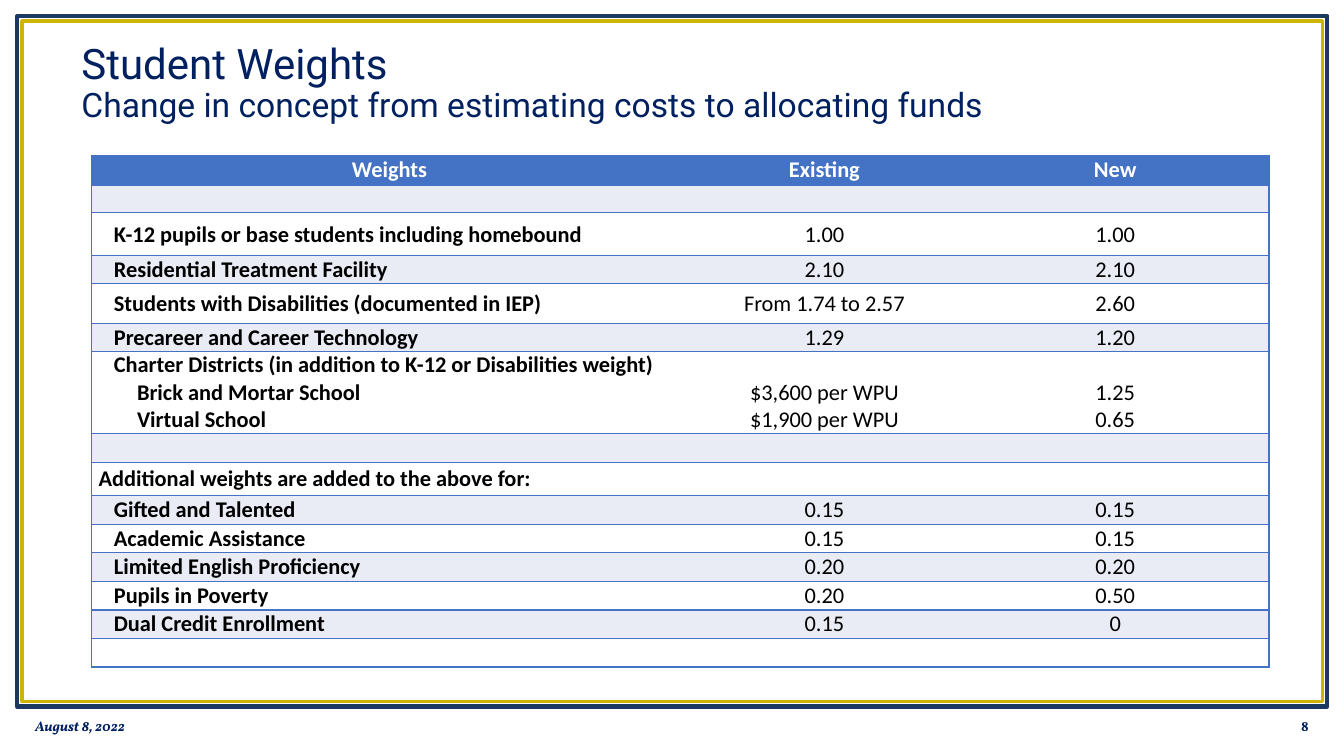
import pptx
import pptx.dml.color
import pptx.enum.shapes
import pptx.enum.text
import pptx.oxml
import pptx.oxml.ns
import pptx.util

Pt = pptx.util.Pt
ALIGN = pptx.enum.text.PP_ALIGN
ANCHOR = pptx.enum.text.MSO_ANCHOR

NAVY, BLUE, BAND, WHITE, BLACK = "002060", "4472C4", "E9EBF5", "FFFFFF", "000000"
INDENT, SUB_INDENT = 10.85, 27.4
BODY_SIZE = 16

# Each row: height, label lines as (text, indent), existing values, new values
ROWS = [
    (21.4, [("Weights", 0)], ["Existing"], ["New"]),
    (19.5, [], [], []),
    (30.7, [("K-12 pupils or base students including homebound", INDENT)], ["1.00"], ["1.00"]),
    (19.6, [("Residential Treatment Facility", INDENT)], ["2.10"], ["2.10"]),
    (28.9, [("Students with Disabilities (documented in IEP)", INDENT)],
     ["From 1.74 to 2.57"], ["2.60"]),
    (20, [("Precareer and Career Technology", INDENT)], ["1.29"], ["1.20"]),
    (58.6, [("Charter Districts (in addition to K-12 or Disabilities weight)", INDENT),
            ("Brick and Mortar School", SUB_INDENT),
            ("Virtual School", SUB_INDENT)],
     ["$3,600 per WPU", "$1,900 per WPU"], ["1.25", "0.65"]),
    (20.4, [], [], []),
    (24, [("Additional weights are added to the above for:", 0)], [], []),
    (20.4, [("Gifted and Talented", INDENT)], ["0.15"], ["0.15"]),
    (20.4, [("Academic Assistance", INDENT)], ["0.15"], ["0.15"]),
    (20.4, [("Limited English Proficiency", INDENT)], ["0.20"], ["0.20"]),
    (20.4, [("Pupils in Poverty", INDENT)], ["0.20"], ["0.50"]),
    (20.4, [("Dual Credit Enrollment", INDENT)], ["0.15"], ["0"]),
    (20.4, [], [], []),
]
COLUMN_WIDTHS = [425.5, 195.8, 219.6]


def rgb(color):
    return pptx.dml.color.RGBColor.from_string(color)


def add_run(p, text, size, font, color, bold=False, italic=False):
    r = p.add_run()
    r.text = text
    r.font.size = Pt(size)
    r.font.name = font
    r.font.color.rgb = rgb(color)
    r.font.bold = bold
    r.font.italic = italic


def add_frame(s, left, top, width, height, color, weight):
    sp = s.shapes.add_shape(pptx.enum.shapes.MSO_SHAPE.RECTANGLE,
                            Pt(left), Pt(top), Pt(width), Pt(height))
    sp.shadow.inherit = False
    sp.fill.background()
    sp.line.color.rgb = rgb(color)
    sp.line.width = Pt(weight)


def add_text_box(s, left, top, width, height, align=ALIGN.LEFT):
    """Add a middle-anchored text box and return its first paragraph."""
    tf = s.shapes.add_textbox(Pt(left), Pt(top), Pt(width), Pt(height)).text_frame
    tf.word_wrap = True
    tf.vertical_anchor = ANCHOR.MIDDLE
    p = tf.paragraphs[0]
    p.alignment = align
    return p


def set_borders(cell, visible):
    """Draw the listed sides of a cell and clear the others."""
    tcPr = cell._tc.get_or_add_tcPr()
    for i, side in enumerate("LRTB"):
        paint = (f'<a:solidFill><a:srgbClr val="{BLUE}"/></a:solidFill>'
                 if side in visible else "<a:noFill/>")
        tcPr.insert(i, pptx.oxml.parse_xml(
            f'<a:ln{side} {pptx.oxml.ns.nsdecls("a")} w="{Pt(1)}">{paint}</a:ln{side}>'))


def fill_cell(cell, lines, align, color, bold):
    """Write (text, indent) lines into a cell, one paragraph each."""
    tf = cell.text_frame
    if not lines:
        # An empty cell still needs its text size so that the row stays low
        tf.paragraphs[0]._p.append(pptx.oxml.parse_xml(
            f'<a:endParaRPr {pptx.oxml.ns.nsdecls("a")} sz="{BODY_SIZE * 100}"/>'))
    for i, (text, indent) in enumerate(lines):
        p = tf.add_paragraph() if i else tf.paragraphs[0]
        p.alignment = align
        if indent:
            pPr = p._p.get_or_add_pPr()
            pPr.set("marL", str(Pt(indent)))
            pPr.set("indent", "0")
        add_run(p, text, BODY_SIZE, "Calibri", color, bold)


def add_weights_table(s, left, top):
    heights = [row[0] for row in ROWS]
    tbl = s.shapes.add_table(len(ROWS), len(COLUMN_WIDTHS), Pt(left), Pt(top),
                             Pt(sum(COLUMN_WIDTHS)), Pt(sum(heights))).table
    for column, width in zip(tbl.columns, COLUMN_WIDTHS):
        column.width = Pt(width)
    for i, (height, labels, existing, new) in enumerate(ROWS):
        tbl.rows[i].height = Pt(height)
        header = i == 0
        fill = BLUE if header else BAND if i % 2 else WHITE
        values = [[(text, 0) for text in column] for column in (existing, new)]
        for j, lines in enumerate([labels] + values):
            cell = tbl.cell(i, j)
            cell.margin_left = cell.margin_right = Pt(5)
            cell.margin_top = cell.margin_bottom = Pt(0)
            # Values of a multi-line row line up with its last labels
            cell.vertical_anchor = (ANCHOR.TOP if header else
                                    ANCHOR.BOTTOM if len(lines) > 1 else ANCHOR.MIDDLE)
            cell.fill.solid()
            cell.fill.fore_color.rgb = rgb(fill)
            set_borders(cell, ("LTB", "TB", "RTB")[j])
            fill_cell(cell, lines, ALIGN.CENTER if header or j else ALIGN.LEFT,
                      WHITE if header else BLACK, header or j == 0)


def main():
    prs = pptx.Presentation()
    prs.slide_width, prs.slide_height = Pt(960), Pt(540)
    s = prs.slides.add_slide(prs.slide_layouts[6])

    # Double frame
    add_frame(s, 12.2, 11.5, 936, 493.2, "1C3961", 3)
    add_frame(s, 15.8, 15.1, 928.8, 486, "CCB400", 2.5)

    # Title and subtitle
    p = add_text_box(s, 51.1, 29.5, 828, 60.5)
    p.line_spacing = 0.9
    add_run(p, "Student Weights", 30, "Roboto", NAVY)
    p.add_line_break()
    add_run(p, "Change in concept from estimating costs to allocating funds", 24, "Roboto", NAVY)

    # Weights table
    add_weights_table(s, 65.5, 111.2)

    # Footer: date and slide number
    p = add_text_box(s, 18, 504, 216, 28.8)
    add_run(p, "August 8, 2022", 10, "Vollkorn", NAVY, bold=True, italic=True)
    p = add_text_box(s, 725.8, 504, 216, 28.8, ALIGN.RIGHT)
    add_run(p, "8", 10, "Vollkorn", NAVY, bold=True)

    prs.save("out.pptx")


if __name__ == "__main__":
    main()
